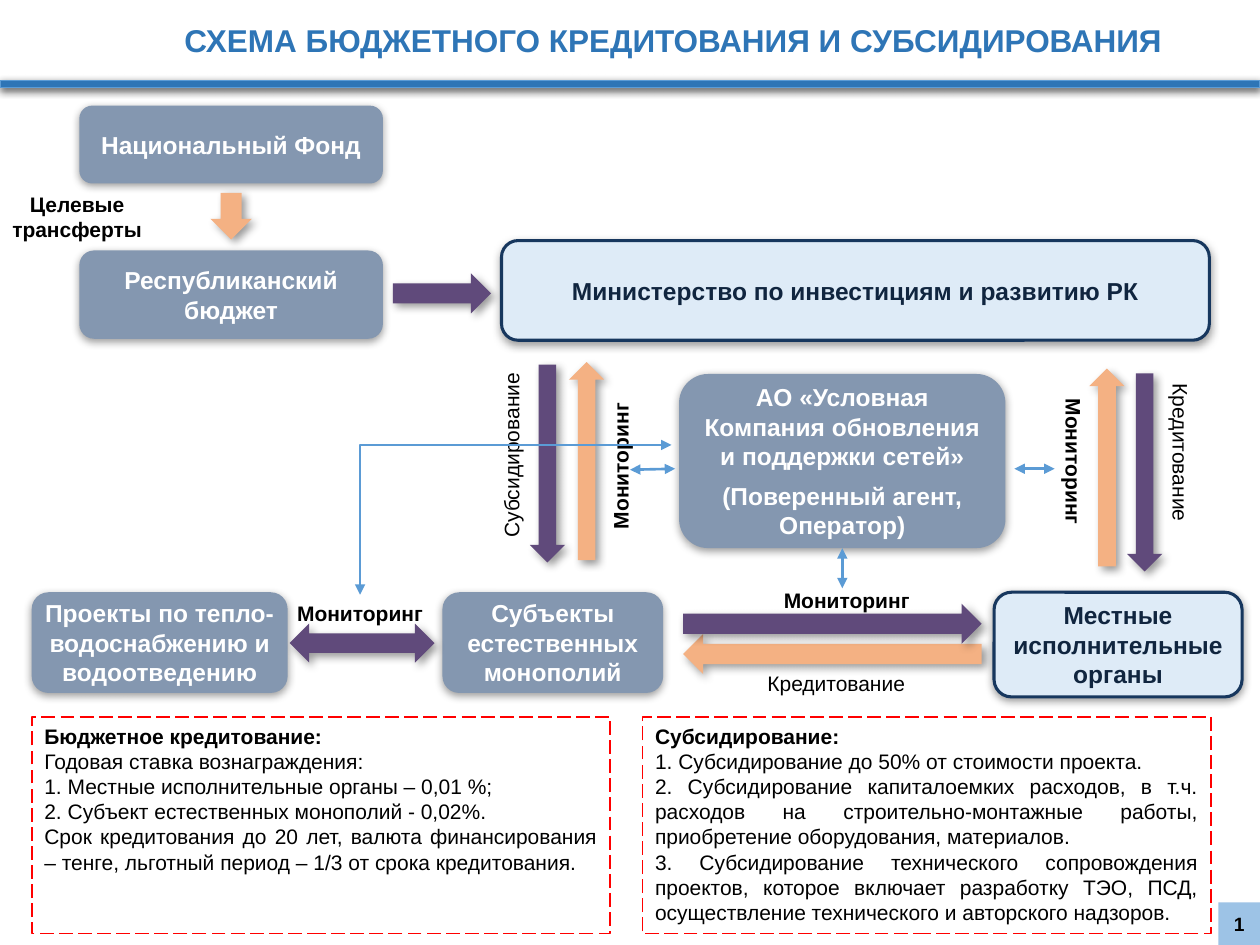
from lxml.etree import SubElement
from pptx import Presentation
from pptx.dml.color import RGBColor
from pptx.enum.dml import MSO_LINE
from pptx.enum.shapes import MSO_CONNECTOR, MSO_SHAPE
from pptx.enum.text import MSO_ANCHOR, MSO_AUTO_SIZE, PP_ALIGN
from pptx.oxml.ns import qn
from pptx.util import Cm, Pt

BLUE, STEEL, PALE, NAVY = "2E75B6", "8497B0", "DEEBF7", "17375E"
PURPLE, ORANGE, SKY, BLACK, WHITE = "604A7B", "F4B183", "5B9BD5", "000000", "FFFFFF"
BOX_SHADOW = (38, 5, 1.6, 90)
ARROW_SHADOW = (40, 5, 3, 45)
BAR_SHADOW = (63, 4.5, 1.5, 90)
LEFT, RIGHT, BOTH = MSO_SHAPE.LEFT_ARROW, MSO_SHAPE.RIGHT_ARROW, MSO_SHAPE.LEFT_RIGHT_ARROW

BOXES = {
    "fund": ((1.6, 2.13, 6.12, 1.57), ["Национальный Фонд"]),
    "budget": ((1.6, 5.05, 6.12, 1.78), ["Республиканский бюджет"]),
    "agent": ((13.69, 7.54, 6.58, 3.51),
              ["АО «Условная Компания обновления и поддержки сетей»",
               "(Поверенный агент, Оператор)"]),
    "projects": ((0.64, 11.94, 5.16, 2.03),
                 ["Проекты по тепло-водоснабжению и водоотведению"]),
    "subjects": ((8.92, 11.94, 4.45, 2.03), ["Субъекты естественных монополий"]),
}
AUTHORITIES = [
    ((10.11, 4.85, 14.27, 2.01), ["Министерство по инвестициям и развитию РК"]),
    ((20.04, 11.94, 5, 2.11), ["Местные исполнительные органы"]),
]
ARROWS = [
    (LEFT, (4.19, 3.94, 0.94, 0.84), ORANGE, 270),
    (RIGHT, (7.92, 5.51, 1.98, 0.81), PURPLE, 0),
    (LEFT, (13.77, 12.78, 6.02, 0.81), ORANGE, 0),
    (RIGHT, (13.77, 12.17, 6.02, 0.81), PURPLE, 0),
    (BOTH, (5.84, 12.57, 2.92, 0.79), PURPLE, 0),
    (RIGHT, (9.04, 8.99, 3.99, 0.71), PURPLE, 90),
    (LEFT, (9.83, 8.94, 3.99, 0.71), ORANGE, 90),
    (LEFT, (20.32, 9.07, 3.99, 0.71), ORANGE, 90),
    (RIGHT, (21.08, 9.17, 3.99, 0.71), PURPLE, 90),
]
LABELS = [
    ("Целевые трансферты", (-0.53, 3.73, 4.17, 1.29), True, 0, PP_ALIGN.CENTER),
    ("Мониторинг", (5.74, 11.99, 3.07, 0.77), True, 0, PP_ALIGN.LEFT),
    ("Мониторинг", (14.1, 11.71, 5.94, 0.77), True, 0, PP_ALIGN.CENTER),
    ("Кредитование", (13.56, 13.39, 6.6, 0.77), False, 0, PP_ALIGN.CENTER),
    ("Субсидирование", (8.38, 8.79, 3.86, 0.77), False, 270, PP_ALIGN.CENTER),
    ("Мониторинг", (10.82, 8.84, 3.38, 0.77), True, 270, PP_ALIGN.LEFT),
    ("Мониторинг", (20.07, 8.92, 3.15, 0.77), True, 90, PP_ALIGN.CENTER),
    ("Кредитование", (22.02, 8.74, 3.56, 0.77), False, 90, PP_ALIGN.CENTER),
]
CREDIT = [
    "Бюджетное кредитование:",
    "Годовая ставка вознаграждения:",
    "1. Местные исполнительные органы – 0,01 %;",
    "2. Субъект естественных монополий - 0,02%.",
    "Срок кредитования до 20 лет, валюта финансирования – тенге, "
    "льготный период – 1/3 от срока кредитования.",
]
SUBSIDY = [
    "Субсидирование:",
    "1. Субсидирование до 50% от стоимости проекта.",
    "2. Субсидирование капиталоемких расходов, в т.ч. расходов на "
    "строительно-монтажные работы, приобретение оборудования, материалов.",
    "3. Субсидирование технического сопровождения проектов, которое включает "
    "разработку ТЭО, ПСД, осуществление технического и авторского надзоров.",
]


def rgb(value):
    """Turn a hex string into a colour."""
    return RGBColor.from_string(value)


def set_attrs(obj, values):
    """Set every attribute named in a dict."""
    for name, value in values.items():
        setattr(obj, name, value)


def place(sp, at):
    """Move and size a shape, in centimetres."""
    set_attrs(sp, dict(zip(("left", "top", "width", "height"), map(Cm, at))))


def write(tf, lines, size, color=BLACK, bold=True, align=PP_ALIGN.CENTER, after=0, **frame):
    """Fill a text frame with one paragraph per line."""
    set_attrs(tf, {"word_wrap": True, "auto_size": MSO_AUTO_SIZE.NONE, **frame})
    for i, line in enumerate(lines):
        p = tf.add_paragraph() if i else tf.paragraphs[0]
        set_attrs(p, {"alignment": align, "space_before": Pt(0), "space_after": Pt(after)})
        r = p.add_run()
        r.text = line
        set_attrs(r.font, {"name": "Arial", "size": Pt(size), "bold": bold})
        r.font.color.rgb = rgb(color)


def add_shape(s, kind, at, fill, shadow=None, line=None, width=1.75):
    """Add a filled preset shape with an optional outline and shadow."""
    sp = s.shapes.add_shape(kind, *map(Cm, at))
    sp.fill.solid()
    sp.fill.fore_color.rgb = rgb(fill)
    if line:
        sp.line.color.rgb = rgb(line)
        sp.line.width = Pt(width)
    else:
        sp.line.fill.background()
    sp.shadow.inherit = False
    if shadow:
        alpha, blur, dist, angle = shadow
        effects = sp._element.spPr.find(qn("a:effectLst"))
        outer = SubElement(effects, qn("a:outerShdw"), blurRad=str(Pt(blur)),
                           dist=str(Pt(dist)), dir=str(angle * 60000), rotWithShape="0")
        clr = SubElement(outer, qn("a:srgbClr"), val=BLACK)
        SubElement(clr, qn("a:alpha"), val=str(alpha * 1000))
    return sp


def add_box(s, at, lines, fill=STEEL, color=WHITE, line=None):
    """Add a rounded box for one participant of the scheme."""
    sp = add_shape(s, MSO_SHAPE.ROUNDED_RECTANGLE, at, fill, BOX_SHADOW, line)
    write(sp.text_frame, lines, 14, color, after=6 if len(lines) > 1 else 0,
          vertical_anchor=MSO_ANCHOR.MIDDLE)
    return sp


def add_label(s, text, at, bold, rotation, align):
    """Add a caption beside an arrow."""
    sp = s.shapes.add_textbox(*map(Cm, at))
    sp.rotation = rotation
    write(sp.text_frame, [text], 12, bold=bold, align=align)


def add_link(s, ends, kind=MSO_CONNECTOR.STRAIGHT):
    """Add a thin connector with arrowheads at both ends."""
    cn = s.shapes.add_connector(kind, *map(Cm, ends))
    cn.line.color.rgb = rgb(SKY)
    cn.line.width = Pt(1.5)
    spPr = cn._element.spPr
    for end in ("a:headEnd", "a:tailEnd"):
        SubElement(spPr.find(qn("a:ln")), qn(end), type="triangle")
    SubElement(spPr, qn("a:effectLst"))
    return cn


def fill_terms(sp, at, lines):
    """Turn a body placeholder into a dashed panel with a bold heading."""
    place(sp, at)
    sp.fill.solid()
    sp.fill.fore_color.rgb = rgb(WHITE)
    sp.line.color.rgb = rgb("FF0000")
    set_attrs(sp.line, {"width": Pt(1), "dash_style": MSO_LINE.LONG_DASH})
    write(sp.text_frame, lines, 12, bold=False, align=PP_ALIGN.JUSTIFY)
    sp.text_frame.paragraphs[0].runs[0].font.bold = True
    for p in sp.text_frame.paragraphs:
        pPr = p._p.get_or_add_pPr()
        set_indent = {"marL": "0", "indent": "0"}
        for name, value in set_indent.items():
            pPr.set(name, value)
        SubElement(pPr, qn("a:buNone"))


def main():
    """Build the slide and save it."""
    prs = Presentation()
    set_attrs(prs, {"slide_width": Cm(25.4), "slide_height": Cm(19.05)})
    s = prs.slides.add_slide(prs.slide_layouts[3])

    place(s.shapes.title, (3.35, 0.3, 20.45, 1.02))
    write(s.shapes.title.text_frame, ["СХЕМА БЮДЖЕТНОГО КРЕДИТОВАНИЯ И СУБСИДИРОВАНИЯ"],
          18, BLUE, word_wrap=False, vertical_anchor=MSO_ANCHOR.TOP)
    add_shape(s, MSO_SHAPE.RECTANGLE, (0, 1.63, 25.4, 0.13), BLUE, BAR_SHADOW, SKY, 0.75)

    boxes = {name: add_box(s, *box) for name, box in BOXES.items()}
    set_attrs(boxes["projects"].text_frame, {"margin_left": Cm(0.1), "margin_right": Cm(0.1)})
    for at, lines in AUTHORITIES:
        add_box(s, at, lines, PALE, "10253F", NAVY)

    for kind, at, fill, rotation in ARROWS:
        add_shape(s, kind, at, fill, ARROW_SHADOW).rotation = rotation
    for label in LABELS:
        add_label(s, *label)

    add_link(s, (12.7, 9.47, 13.61, 9.45))
    add_link(s, (21.26, 9.45, 20.45, 9.45))
    add_link(s, (16.98, 11.86, 16.98, 11.05)).end_connect(boxes["agent"], 2)
    bent = add_link(s, (13.54, 8.97, 7.26, 11.99), MSO_CONNECTOR.ELBOW)
    bent._element.spPr.find(qn("a:prstGeom")).set("prst", "bentConnector2")

    fill_terms(s.placeholders[1], (0.64, 14.45, 11.66, 4.37), CREDIT)
    fill_terms(s.placeholders[2], (12.95, 14.45, 11.46, 4.37), SUBSIDY)

    number = add_shape(s, MSO_SHAPE.RECTANGLE, (24.56, 18.19, 0.84, 0.86), "9DC3E6")
    write(number.text_frame, ["1"], 11, vertical_anchor=MSO_ANCHOR.MIDDLE)
    prs.save("out.pptx")


if __name__ == "__main__":
    main()
